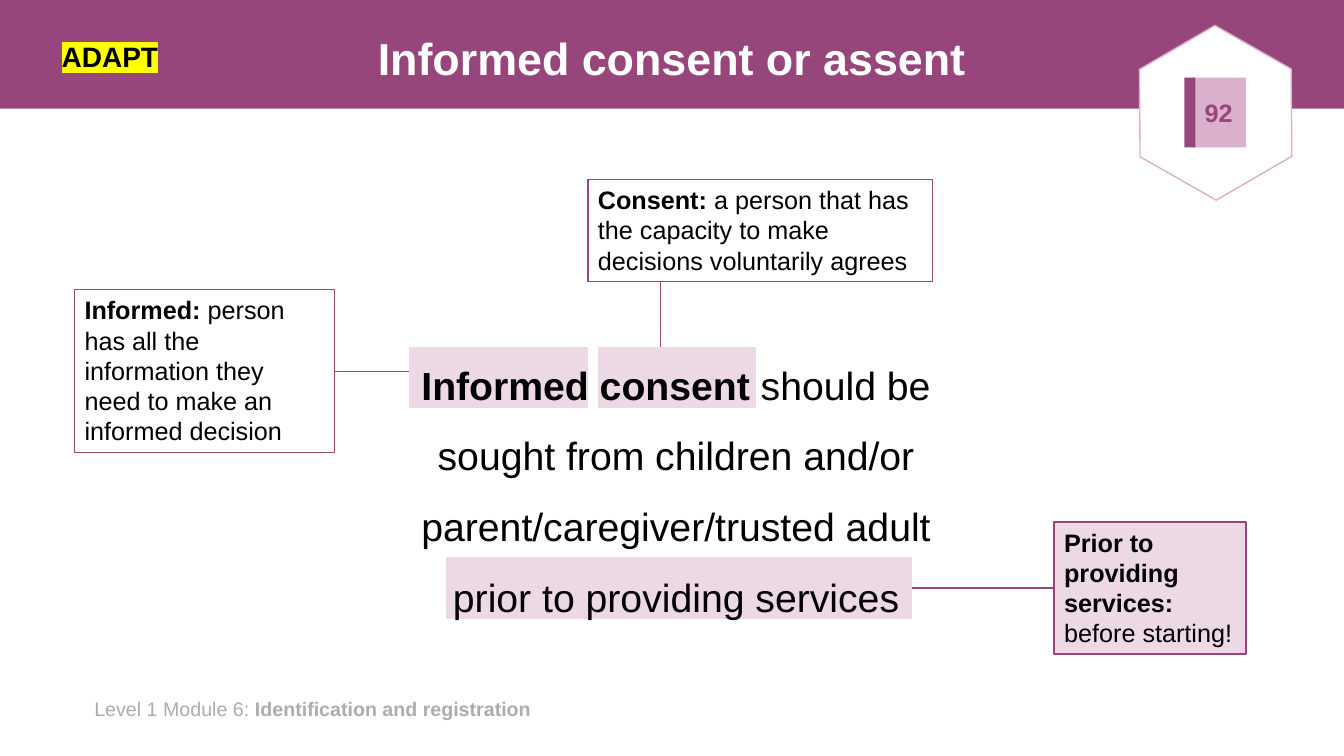
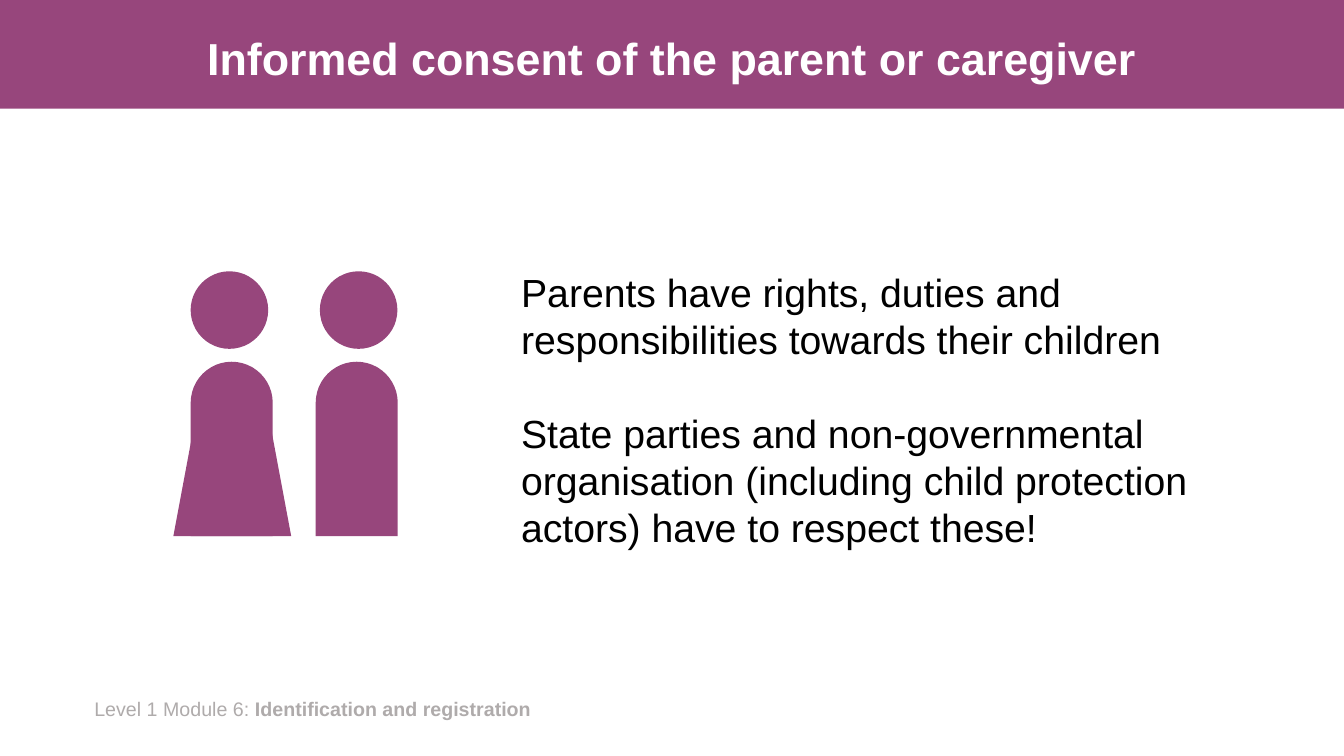
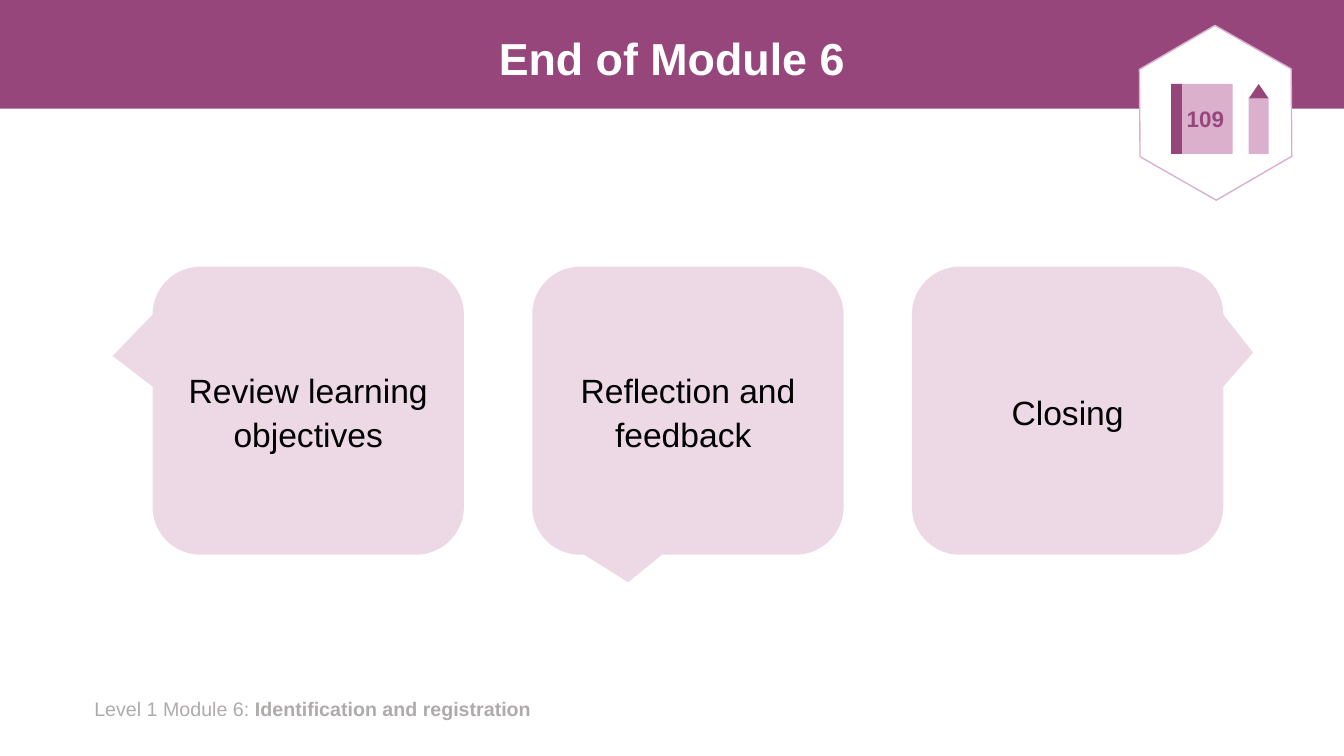
from lxml.etree import SubElement
from pptx import Presentation
from pptx.dml.color import RGBColor
from pptx.enum.shapes import MSO_CONNECTOR, MSO_SHAPE
from pptx.enum.text import MSO_ANCHOR, PP_ALIGN
from pptx.oxml import parse_xml
from pptx.oxml.ns import nsdecls, qn
from pptx.util import Pt

COLORS = {
    "plum": "97467C",
    "mauve": "DAB0CC",
    "blush": "EDD8E6",
    "white": "FFFFFF",
    "black": "000000",
    "grey": "AFABAB",
    "yellow": "FFFF00",
}
FONT = "Arial"
SLIDE_W, SLIDE_H = 960, 540


def rgb(name):
    return RGBColor.from_string(COLORS[name])


def write(sp, paragraphs, size, color="black", align=PP_ALIGN.LEFT,
          anchor=MSO_ANCHOR.TOP, spacing=None, after=0, wrap=True):
    """Fill a shape with paragraphs, each a list of (text, bold) runs."""
    tf = sp.text_frame
    tf.word_wrap = wrap
    tf.vertical_anchor = anchor
    for i, runs in enumerate(paragraphs):
        p = tf.add_paragraph() if i else tf.paragraphs[0]
        p.alignment = align
        p.space_after = Pt(after)
        if spacing:
            p.line_spacing = spacing
        for text, bold in runs:
            r = p.add_run()
            r.text = text
            r.font.name = FONT
            r.font.size = Pt(size)
            r.font.bold = bold
            r.font.color.rgb = rgb(color)


def add_text(slide, box, paragraphs, size, **style):
    sp = slide.shapes.add_textbox(*map(Pt, box))
    write(sp, paragraphs, size, **style)
    return sp


def add_shape(slide, kind, box, fill=None, line=None):
    sp = slide.shapes.add_shape(kind, *map(Pt, box))
    sp.shadow.inherit = False
    if fill:
        sp.fill.solid()
        sp.fill.fore_color.rgb = rgb(fill)
    else:
        sp.fill.background()
    if line:
        sp.line.color.rgb = rgb(line)
        sp.line.width = Pt(1)
    else:
        sp.line.fill.background()
    return sp


def add_line(slide, start, end):
    line = slide.shapes.add_connector(
        MSO_CONNECTOR.STRAIGHT, *map(Pt, (*start, *end)))
    line.line.color.rgb = rgb("plum")
    line.line.width = Pt(1)
    SubElement(line._element.spPr, qn("a:effectLst"))
    return line


def new_slide(prs, title):
    """Blank slide with the title band and the module footer."""
    slide = prs.slides.add_slide(prs.slide_layouts[6])
    add_shape(slide, MSO_SHAPE.RECTANGLE, (0, 0, SLIDE_W, 77.6), "plum")
    add_text(slide, (60.3, 494.6, 327.6, 24.2),
             [[("Level 1 Module 6: ", False),
               ("Identification and registration", True)]], 14, color="grey")
    add_text(slide, (66, 9.4, 828, 68.4), [[(title, True)]], 32, color="white",
             align=PP_ALIGN.CENTER, anchor=MSO_ANCHOR.MIDDLE, spacing=0.9)
    return slide


def page_badge(slide, page, book, size, pencil=False):
    """Hexagon with a workbook at the point book, and a pencil if wanted."""
    hexagon = add_shape(slide, MSO_SHAPE.HEXAGON, (805.7, 26.6, 125.3, 108),
                        "white", "mauve")
    hexagon.adjustments[0] = 0.29
    hexagon.rotation = 29.7
    x, y = book
    cover = add_shape(slide, MSO_SHAPE.RECTANGLE, (x + 5, y, 39, 50), "mauve")
    write(cover, [[(page, True)]], size, color="plum", align=PP_ALIGN.CENTER,
          anchor=MSO_ANCHOR.MIDDLE, wrap=False)
    add_shape(slide, MSO_SHAPE.RECTANGLE, (x, y, 7.8, 50), "plum")
    if pencil:
        add_shape(slide, MSO_SHAPE.ISOSCELES_TRIANGLE,
                  (x + 55.4, y, 14.4, 10.5), "plum")
        add_shape(slide, MSO_SHAPE.RECTANGLE,
                  (x + 55.4, y + 10.5, 14.4, 39.5), "mauve")


def adapt_tag(slide, box):
    tag = add_text(slide, box, [[("ADAPT", True)]], 20)
    highlight = parse_xml(
        f'<a:highlight {nsdecls("a")}><a:srgbClr val="{COLORS["yellow"]}"/>'
        "</a:highlight>")
    r = tag.text_frame.paragraphs[0].runs[0]
    r.font._element.find(qn("a:latin")).addprevious(highlight)


def definition(slide, box, term, meaning, fill=None):
    sp = add_shape(slide, MSO_SHAPE.RECTANGLE, box, fill, "plum")
    write(sp, [[(term + " ", True), (meaning, False)]], 18)
    return sp


def person(slide, x, y, head_shift=0, skirt=False):
    body = add_shape(slide, MSO_SHAPE.ROUND_2_SAME_RECTANGLE,
                     (x, y + 64.6, 58.6, 124.6), "plum")
    body.adjustments[0] = 0.5
    add_shape(slide, MSO_SHAPE.OVAL, (x + head_shift, y, 55.4, 55.4), "plum")
    if skirt:
        sp = add_shape(slide, MSO_SHAPE.FLOWCHART_MANUAL_OPERATION,
                       (x - 12.4, y + 99.2, 84.2, 90), "plum")
        sp.rotation = 180


def speech_bubble(slide, box, text, tip):
    sp = add_shape(slide, MSO_SHAPE.ROUNDED_RECTANGULAR_CALLOUT, box, "blush")
    sp.adjustments[0], sp.adjustments[1] = tip
    write(sp, [[(text, False)]], 24, align=PP_ALIGN.CENTER,
          anchor=MSO_ANCHOR.MIDDLE, spacing=1.07, after=8)


def consent_slide(prs):
    slide = new_slide(prs, "Informed consent or assent")
    marks = [add_shape(slide, MSO_SHAPE.FLOWCHART_PROCESS, (x, y, w, 44), "blush")
             for x, y, w in ((292.3, 247.7, 127.5), (427.5, 247.7, 112.5),
                             (318.3, 398, 333.3))]
    add_text(slide, (292.3, 237.6, 381, 204.5),
             [[("Informed consent ", True),
               ("should be sought from children and/or parent/caregiver/"
                "trusted adult prior to providing services", False)]],
             28, align=PP_ALIGN.CENTER, spacing=1.5)

    informed = definition(
        slide, (53.3, 207, 185.7, 116.4), "Informed:",
        "person has all the information they need to make an informed decision")
    add_line(slide, (239, 265.2), (292.3, 265.2)).begin_connect(informed, 3)

    definition(
        slide, (420, 128.2, 246.2, 72.7), "Consent:",
        "a person that has the capacity to make decisions voluntarily agrees")
    add_line(slide, (471.6, 200.9), (471.6, 247.7))

    prior = definition(slide, (753, 372.8, 137, 94.4),
                       "Prior to providing services:", "before starting!", "blush")
    link = add_line(slide, (651.6, 420), (753, 420))
    link.begin_connect(marks[2], 3)
    link.end_connect(prior, 1)

    page_badge(slide, "92", (846, 55.4), 18)
    adapt_tag(slide, (36.9, 24.5, 158.4, 31.5))


def parents_slide(prs):
    slide = new_slide(prs, "Informed consent of the parent or caregiver")
    add_text(slide, (365.2, 188, 501, 211),
             [[("Parents have rights, duties and responsibilities "
                "towards their children", False)],
              [("State parties and non-governmental organisation (including "
                "child protection actors) have to respect these!", False)]],
             28, after=33.5)
    person(slide, 225.5, 193.8, head_shift=3)
    person(slide, 136.2, 193.8, skirt=True)


def closing_slide(prs):
    slide = new_slide(prs, "End of Module 6")
    bubbles = (("Review learning objectives", (-0.628, -0.19)),
               ("Reflection and feedback ", (-0.192, 0.596)),
               ("Closing", (0.596, -0.202)))
    left, width, gap = 109, 222.4, 48.8
    for i, (text, tip) in enumerate(bubbles):
        speech_bubble(slide, (left + i * (width + gap), 190.5, width, 205.7),
                      text, tip)
    page_badge(slide, "109", (836.5, 60), 16, pencil=True)


def main():
    prs = Presentation()
    prs.slide_width, prs.slide_height = Pt(SLIDE_W), Pt(SLIDE_H)
    consent_slide(prs)
    parents_slide(prs)
    closing_slide(prs)
    prs.save("out.pptx")


if __name__ == "__main__":
    main()
